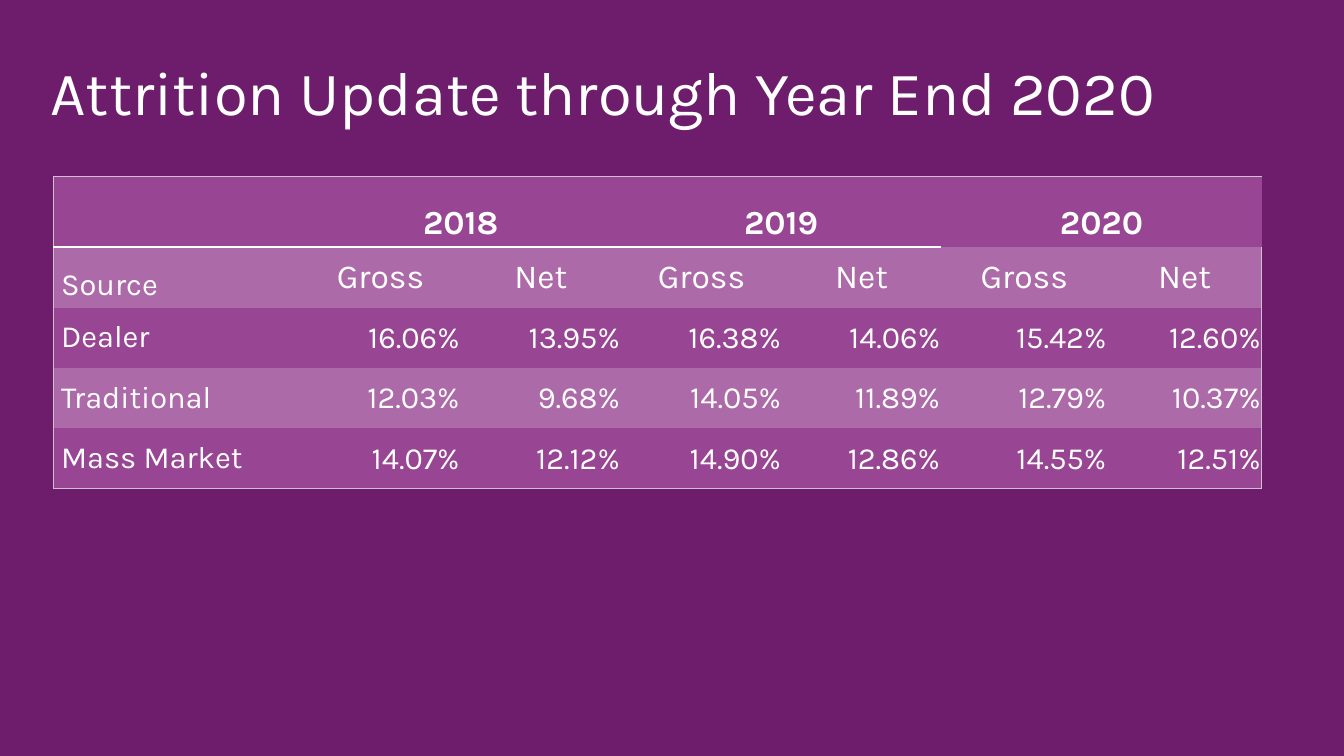
from lxml.etree import SubElement
from pptx import Presentation
from pptx.dml.color import RGBColor
from pptx.enum.text import MSO_ANCHOR, PP_ALIGN
from pptx.oxml.ns import qn
from pptx.util import Cm, Pt

COLOURS = {
    "background": "6D1D6B",
    "row": "984593",
    "band": "AD6AA9",
    "outline": "D2BED1",
    "text": "FFFFFF",
}
FONT = "Karla"
YEARS = ["2018", "2019", "2020"]
COLUMN_WIDTHS = [6.22, 4.04, 4.04, 4.06, 4.01, 4.19, 3.89]
ROW_HEIGHTS = [1.78, 1.52, 1.52, 1.52, 1.52]
RULED_COLUMNS = 5
ATTRITION = [
    ["Dealer", "16.06%", "13.95%", "16.38%", "14.06%", "15.42%", "12.60%"],
    ["Traditional", "12.03%", "9.68%", "14.05%", "11.89%", "12.79%", "10.37%"],
    ["Mass Market", "14.07%", "12.12%", "14.90%", "12.86%", "14.55%", "12.51%"],
]


def colour(name):
    return RGBColor.from_string(COLOURS[name])


def add_text(paragraph, text, size, bold=False):
    run = paragraph.add_run()
    run.text = text
    run.font.name = FONT
    run.font.size = Pt(size)
    run.font.bold = bold
    run.font.color.rgb = colour("text")


def add_title(slide, left, top, width, height):
    title = slide.shapes.title
    title.left, title.top, title.width, title.height = map(Cm, (left, top, width, height))
    frame = title.text_frame
    frame.word_wrap = True
    frame.vertical_anchor = MSO_ANCHOR.TOP
    frame.margin_top = Cm(0.28)
    paragraph = frame.paragraphs[0]
    paragraph.alignment = PP_ALIGN.LEFT
    paragraph.line_spacing = 1.0
    add_text(paragraph, "Attrition Update through Year End 2020", 44)


def set_borders(cell, row, column):
    last_row, last_column = len(ROW_HEIGHTS), len(COLUMN_WIDTHS)

    def horizontal_rule(edge):
        if edge in (0, last_row):
            return "outline", 1
        if edge == 1 and column < RULED_COLUMNS:
            return "text", 2
        return None

    def vertical_rule(edge):
        return ("outline", 1) if edge in (0, last_column) else None

    rules = {
        "a:lnL": vertical_rule(column),
        "a:lnR": vertical_rule(column + 1),
        "a:lnT": horizontal_rule(row),
        "a:lnB": horizontal_rule(row + 1),
    }
    properties = cell._tc.get_or_add_tcPr()
    for tag, rule in rules.items():
        line = SubElement(properties, qn(tag))
        if rule is None:
            SubElement(line, qn("a:noFill"))
        else:
            name, points = rule
            line.set("w", str(Pt(points)))
            fill = SubElement(line, qn("a:solidFill"))
            SubElement(fill, qn("a:srgbClr"), val=COLOURS[name])


def format_cell(cell, row, column):
    set_borders(cell, row, column)
    cell.fill.solid()
    cell.fill.fore_color.rgb = colour("band" if row % 2 else "row")
    is_value = row > 1 and column > 0
    side = Cm(0.03) if is_value else Cm(0.19)
    cell.margin_left = cell.margin_right = side
    cell.margin_top = Cm(0.03) if is_value else Cm(0.1)
    cell.margin_bottom = Cm(0) if is_value else Cm(0.1)
    at_bottom = row == 0 or (row == 1 and column == 0)
    cell.vertical_anchor = MSO_ANCHOR.BOTTOM if at_bottom else MSO_ANCHOR.MIDDLE


def add_attrition_table(slide, left, top, width, height):
    rows = [
        [""] + [text for year in YEARS for text in (year, "")],
        ["Source"] + ["Gross", "Net"] * len(YEARS),
        *ATTRITION,
    ]
    table = slide.shapes.add_table(
        len(rows), len(COLUMN_WIDTHS), Cm(left), Cm(top), Cm(width), Cm(height)
    ).table
    table.first_row = False
    table.horz_banding = False
    for column, column_width in zip(table.columns, COLUMN_WIDTHS):
        column.width = Cm(column_width)
    for row, row_height in zip(table.rows, ROW_HEIGHTS):
        row.height = Cm(row_height)
    for first in range(1, len(COLUMN_WIDTHS), 2):
        table.cell(0, first).merge(table.cell(0, first + 1))
    for row, texts in enumerate(rows):
        for column, text in enumerate(texts):
            cell = table.cell(row, column)
            format_cell(cell, row, column)
            if not text:
                continue
            paragraph = cell.text_frame.paragraphs[0]
            if column == 0:
                paragraph.alignment = PP_ALIGN.LEFT
            else:
                paragraph.alignment = PP_ALIGN.CENTER if row < 2 else PP_ALIGN.RIGHT
            size = 24 if row < 2 and column > 0 else 22
            add_text(paragraph, text, size, bold=row == 0)


def main():
    presentation = Presentation()
    presentation.slide_width = Cm(33.87)
    presentation.slide_height = Cm(19.05)
    slide = presentation.slides.add_slide(presentation.slide_layouts[5])
    slide.background.fill.solid()
    slide.background.fill.fore_color.rgb = colour("background")
    add_title(slide, 1.02, 1.07, 31.14, 1.42)
    add_attrition_table(slide, 1.35, 4.45, sum(COLUMN_WIDTHS), sum(ROW_HEIGHTS))
    presentation.save("out.pptx")


if __name__ == "__main__":
    main()
